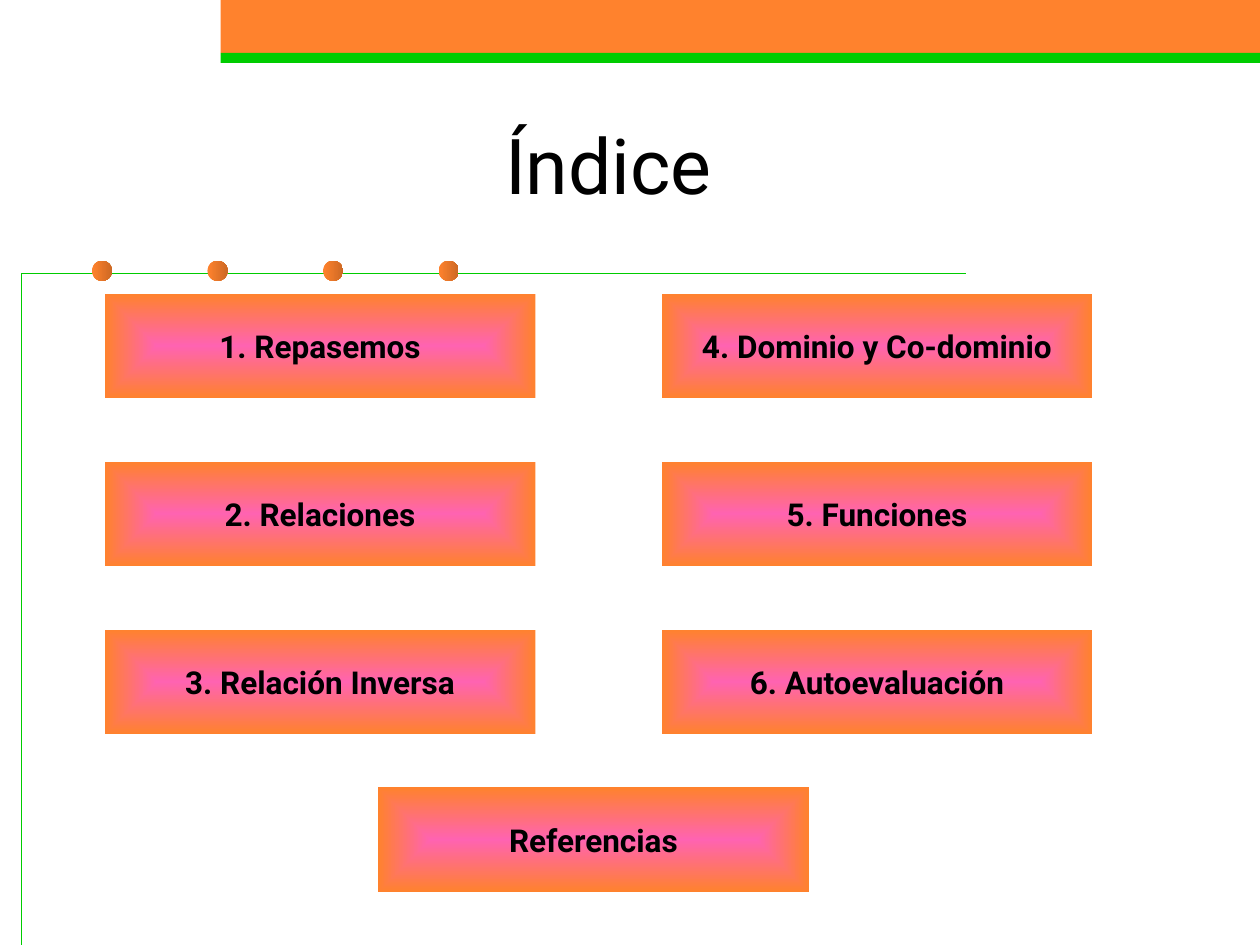
from lxml import etree
from pptx import Presentation
from pptx import util as u
from pptx.dml.color import RGBColor
from pptx.enum import shapes, text
from pptx.oxml.ns import qn

FONT = "Roboto"
ORANGE, BROWN, PINK, GREEN, BLACK = "FF822D", "CD6924", "FF63B1", "00CC00", "000000"
BUTTON_W, BUTTON_H = 3.42, 0.83


def color(value):
    return RGBColor.from_string(value)


def add_shape(s, kind, x, y, w, h):
    sp = s.shapes.add_shape(kind, *map(u.Inches, (x, y, w, h)))
    sp.shadow.inherit = False
    sp.line.fill.background()
    return sp


def add_bar(s, y, h, fill):
    sp = add_shape(s, shapes.MSO_SHAPE.RECTANGLE, 1.75, y, 8.25, h)
    sp.fill.solid()
    sp.fill.fore_color.rgb = color(fill)


def set_gradient(sp, start, end):
    sp.fill.gradient()
    sp.fill.gradient_angle = 0
    for stop, value in zip(sp.fill.gradient_stops, (start, end)):
        stop.color.rgb = color(value)


def center_gradient(sp):
    grad = sp._element.spPr.find(qn("a:gradFill"))
    lin = grad.find(qn("a:lin"))
    path = etree.Element(qn("a:path"), path="rect")
    etree.SubElement(path, qn("a:fillToRect"), l="50000", t="50000", r="50000", b="50000")
    grad.replace(lin, path)


def add_frame_line(s):
    points = [(u.Inches(x), u.Inches(y)) for x, y in ((0.17, 7.5), (0.17, 2.17), (7.67, 2.17))]
    builder = s.shapes.build_freeform(*points[0])
    builder.add_line_segments(points[1:], close=False)
    sp = builder.convert_to_shape()
    sp.shadow.inherit = False
    sp.fill.background()
    sp.line.color.rgb = color(GREEN)
    sp.line.width = u.Pt(0.75)


def add_dot(s, x):
    sp = add_shape(s, shapes.MSO_SHAPE.OVAL, x, 2.07, 0.16, 0.16)
    set_gradient(sp, ORANGE, BROWN)


def set_text(sp, words, size, bold=False, wrap=True):
    tf = sp.text_frame
    tf.word_wrap = wrap
    tf.vertical_anchor = text.MSO_ANCHOR.MIDDLE
    p = tf.paragraphs[0]
    p.text = words
    p.alignment = text.PP_ALIGN.CENTER
    p.font.name = FONT
    p.font.size = u.Pt(size)
    p.font.bold = bold
    p.font.color.rgb = color(BLACK)


def add_title(s, words):
    sp = s.shapes.add_textbox(*map(u.Inches, (0.58, 0.67, 8.5, 1.25)))
    set_text(sp, words, 44)


def add_button(s, x, y, words):
    sp = add_shape(s, shapes.MSO_SHAPE.ACTION_BUTTON_CUSTOM, x, y, BUTTON_W, BUTTON_H)
    set_gradient(sp, PINK, ORANGE)
    center_gradient(sp)
    set_text(sp, words, 18, bold=True, wrap=False)


def main():
    prs = Presentation()
    prs.slide_width, prs.slide_height = u.Inches(10), u.Inches(7.5)
    s = prs.slides.add_slide(prs.slide_layouts[6])

    add_bar(s, 0, 0.42, ORANGE)
    add_bar(s, 0.42, 0.08, GREEN)
    add_frame_line(s)
    for i in range(4):
        add_dot(s, 0.73 + i * 0.917)
    add_title(s, "Índice")

    columns = (
        (0.83, ("1. Repasemos", "2. Relaciones", "3. Relación Inversa")),
        (5.25, ("4. Dominio y Co-dominio", "5. Funciones", "6. Autoevaluación")),
    )
    for x, topics in columns:
        for row, topic in enumerate(topics):
            add_button(s, x, 2.33 + row * 4 / 3, topic)
    add_button(s, 3, 6.25, "Referencias")

    prs.save("out.pptx")


if __name__ == "__main__":
    main()
